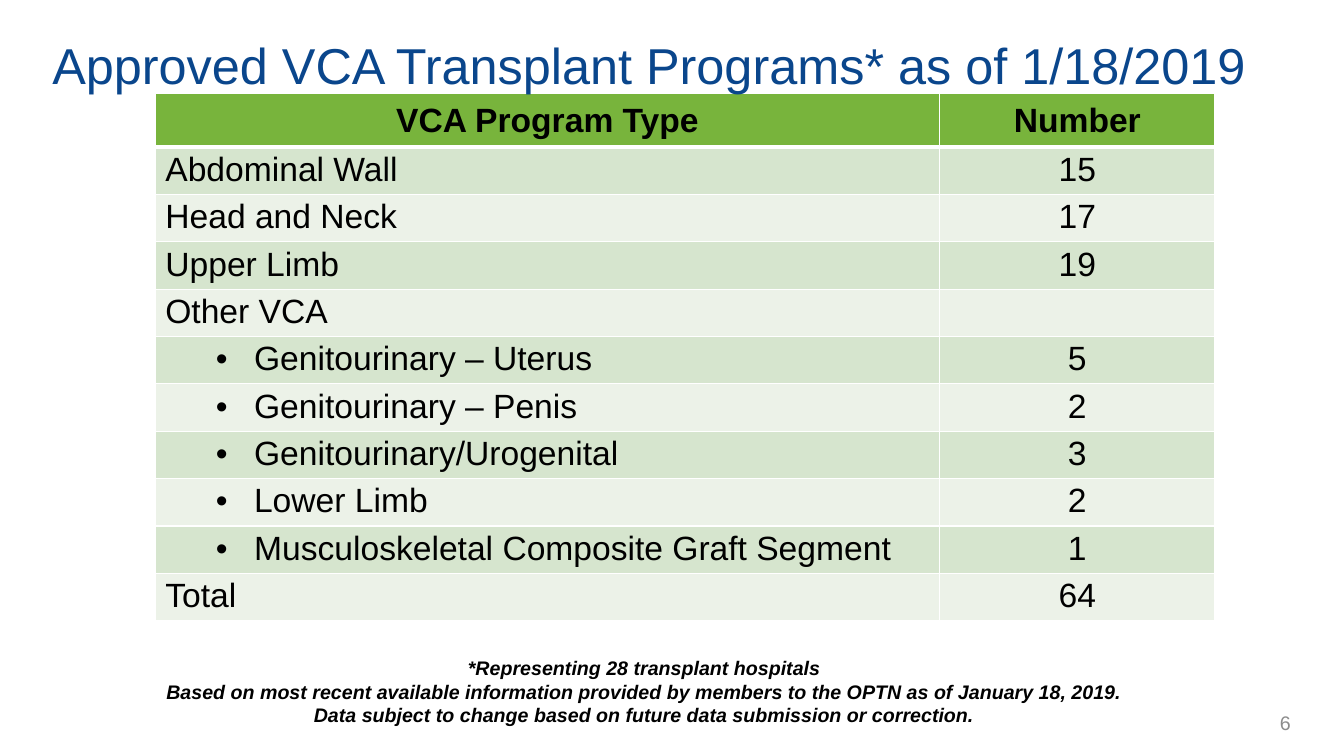
from dataclasses import dataclass

from pptx import Presentation
from pptx.dml.color import RGBColor
from pptx.enum.text import MSO_ANCHOR, PP_ALIGN
from pptx.oxml.ns import qn
from pptx.slide import Slide
from pptx.table import Table, _Cell
from pptx.text.text import _Paragraph
from pptx.util import Inches, Pt
from lxml.etree import SubElement

BLACK = RGBColor(0x00, 0x00, 0x00)
WHITE = RGBColor(0xFF, 0xFF, 0xFF)
TITLE_BLUE = RGBColor(0x0A, 0x46, 0x8C)
PAGE_GREY = RGBColor(0x8C, 0x8C, 0x8C)
HEADER_GREEN = RGBColor(0x78, 0xB4, 0x3C)
BAND_GREENS = (RGBColor(0xD6, 0xE5, 0xCE), RGBColor(0xEC, 0xF2, 0xE8))

HEADER_HEIGHT, ROW_HEIGHT = 0.53, 0.47
COLUMN_WIDTHS = (7.78, 2.73)


@dataclass(frozen=True)
class TextStyle:
    size: float
    color: RGBColor = BLACK
    bold: bool = False
    italic: bool = False
    align: PP_ALIGN = PP_ALIGN.LEFT


@dataclass(frozen=True)
class Program:
    name: str
    count: str
    is_subtype: bool = False


@dataclass(frozen=True)
class TextBlock:
    left: float
    top: float
    width: float
    height: float
    lines: tuple[str, ...]
    style: TextStyle
    anchor: MSO_ANCHOR = MSO_ANCHOR.MIDDLE


HEADER = TextStyle(24, bold=True, align=PP_ALIGN.CENTER)
NAME = TextStyle(24)
COUNT = TextStyle(24, align=PP_ALIGN.CENTER)

PROGRAMS = (
    Program("Abdominal Wall", "15"),
    Program("Head and Neck", "17"),
    Program("Upper Limb", "19"),
    Program("Other VCA", ""),
    Program("Genitourinary – Uterus", "5", True),
    Program("Genitourinary – Penis", "2", True),
    Program("Genitourinary/Urogenital", "3", True),
    Program("Lower Limb", "2", True),
    Program("Musculoskeletal Composite Graft Segment", "1", True),
    Program("Total", "64"),
)

TEXT_BLOCKS = (
    TextBlock(0.42, 0.17, 12.75, 0.93,
              ("Approved VCA Transplant Programs* as of 1/18/2019",),
              TextStyle(36, TITLE_BLUE)),
    TextBlock(10.64, 6.97, 2.26, 0.4, ("6",),
              TextStyle(14, PAGE_GREY, align=PP_ALIGN.RIGHT)),
    TextBlock(0, 6.46, 12.78, 0.81,
              ("*Representing 28 transplant hospitals",
               "Based on most recent available information provided by members "
               "to the OPTN as of January 18, 2019.",
               "Data subject to change based on future data submission or correction."),
              TextStyle(14, bold=True, italic=True, align=PP_ALIGN.CENTER),
              MSO_ANCHOR.TOP),
)


def write(paragraph: _Paragraph, text: str, style: TextStyle) -> None:
    paragraph.alignment = style.align
    if not text:
        return
    run = paragraph.add_run()
    run.text = text
    run.font.name = "Arial"
    run.font.size = Pt(style.size)
    run.font.bold = style.bold
    run.font.italic = style.italic
    run.font.color.rgb = style.color


def add_bullet(paragraph: _Paragraph) -> None:
    properties = paragraph._p.get_or_add_pPr()
    properties.set("lvl", "1")
    properties.set("marL", str(Inches(0.88)))
    properties.set("indent", str(Inches(-0.38)))
    SubElement(properties, qn("a:buFont"), typeface="Arial")
    SubElement(properties, qn("a:buChar"), char="•")


def add_borders(cell: _Cell, top: float, bottom: float) -> None:
    properties = cell._tc.get_or_add_tcPr()
    for side, width in (("L", 1), ("R", 1), ("T", top), ("B", bottom)):
        line = SubElement(properties, qn(f"a:ln{side}"), w=str(Pt(width)))
        fill = SubElement(line, qn("a:solidFill"))
        SubElement(fill, qn("a:srgbClr"), val=str(WHITE))


def fill_row(table: Table, index: int, program: Program,
             styles: tuple[TextStyle, TextStyle]) -> None:
    is_header = index == 0
    table.rows[index].height = Inches(HEADER_HEIGHT if is_header else ROW_HEIGHT)
    for column, (text, style) in enumerate(zip((program.name, program.count), styles)):
        cell = table.cell(index, column)
        add_borders(cell, top=3 if index == 1 else 1, bottom=3 if is_header else 1)
        cell.fill.solid()
        cell.fill.fore_color.rgb = (
            HEADER_GREEN if is_header else BAND_GREENS[(index - 1) % 2])
        cell.margin_top = cell.margin_bottom = Inches(0.04)
        cell.vertical_anchor = MSO_ANCHOR.MIDDLE if is_header else MSO_ANCHOR.TOP
        paragraph = cell.text_frame.paragraphs[0]
        if program.is_subtype and column == 0:
            add_bullet(paragraph)
        write(paragraph, text, style)


def add_program_table(slide: Slide) -> None:
    height = HEADER_HEIGHT + ROW_HEIGHT * len(PROGRAMS)
    table = slide.shapes.add_table(
        len(PROGRAMS) + 1, len(COLUMN_WIDTHS), Inches(1.54), Inches(0.93),
        Inches(sum(COLUMN_WIDTHS)), Inches(height)).table
    for column, width in zip(table.columns, COLUMN_WIDTHS):
        column.width = Inches(width)
    fill_row(table, 0, Program("VCA Program Type", "Number"), (HEADER, HEADER))
    for index, program in enumerate(PROGRAMS, start=1):
        fill_row(table, index, program, (NAME, COUNT))


def add_text_block(slide: Slide, block: TextBlock) -> None:
    frame = slide.shapes.add_textbox(
        Inches(block.left), Inches(block.top),
        Inches(block.width), Inches(block.height)).text_frame
    frame.word_wrap = True
    frame.vertical_anchor = block.anchor
    for number, line in enumerate(block.lines):
        paragraph = frame.add_paragraph() if number else frame.paragraphs[0]
        write(paragraph, line, block.style)


def main() -> None:
    presentation = Presentation()
    presentation.slide_width = Inches(13.33)
    presentation.slide_height = Inches(7.5)
    slide = presentation.slides.add_slide(presentation.slide_layouts[6])
    add_program_table(slide)
    for block in TEXT_BLOCKS:
        add_text_block(slide, block)
    presentation.save("out.pptx")


if __name__ == "__main__":
    main()
